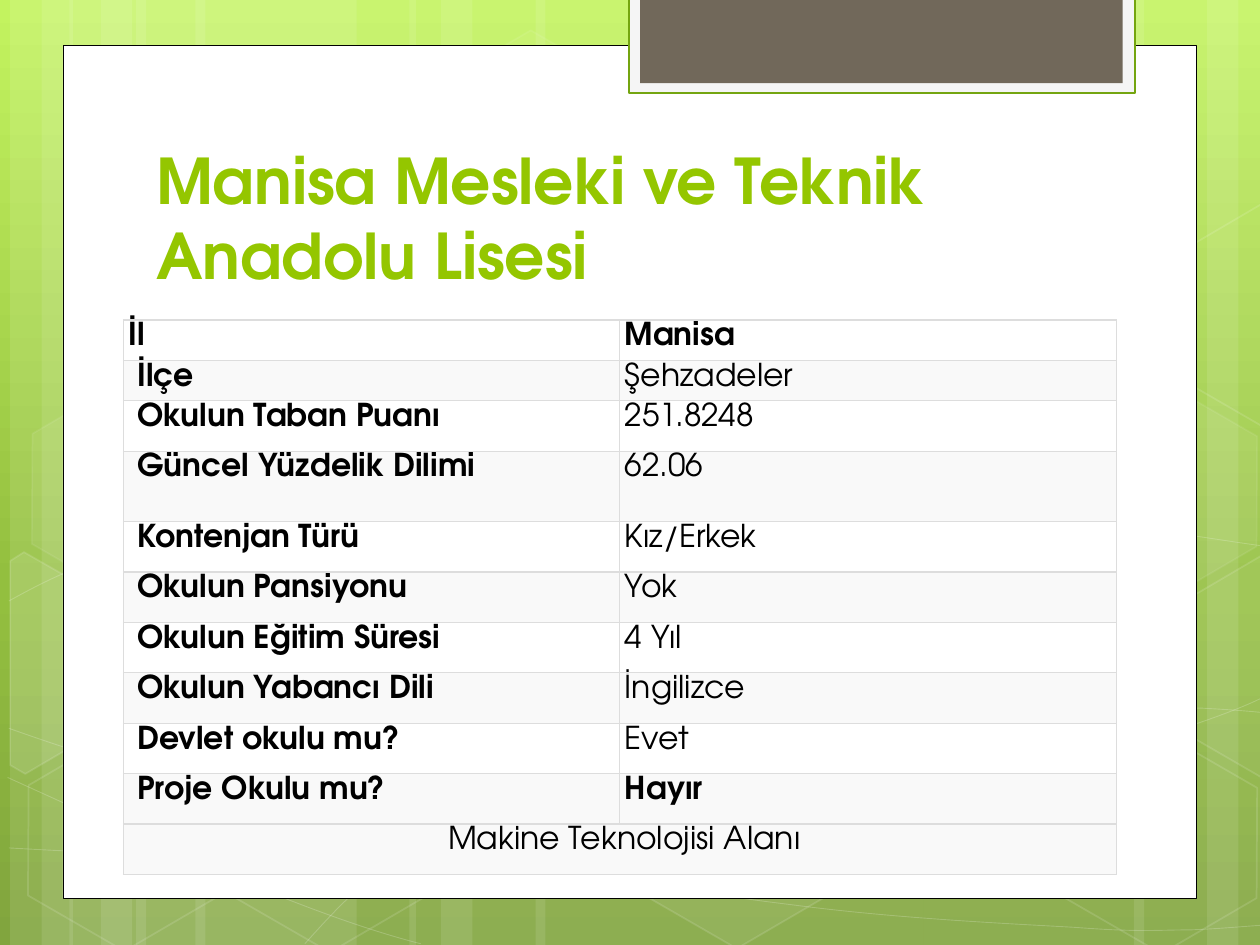
from copy import deepcopy
from math import cos, radians, sin
from pptx import Presentation
from pptx.dml.color import RGBColor
from pptx.enum.shapes import MSO_SHAPE
from pptx.enum.text import MSO_ANCHOR, PP_ALIGN
from pptx.oxml import parse_xml
from pptx.oxml.ns import nsdecls, qn
from pptx.util import Inches, Pt

FONT = "TeX Gyre Adventor"
HUES = {
    "white": "FFFFFF", "black": "000000", "lime": "94C600", "leaf": "74A510",
    "pale": "F5F5F5", "stone": "71685A", "band": "F9F9F9", "rule": "DDDDDD",
}
SKY = [(0, "C3F35F"), (0.62, "93BF3F"), (1, "81A53E")]
BARS = [
    (1.08, 1.75), (0.08, 0.5), (0.33, 0.83), (1.55, 1.75), (0.55, 0.5), (0.8, 0.83),
    (7.33, 1.75), (9.58, 0.5), (9, 0.83), (4.25, 3.08), (3.25, 0.5), (3.5, 0.83),
]
WAVES = [
    [(0.07, 6.73), (0.61, 6.76), (1.15, 6.79), (1.9, 6.78), (2.65, 6.77), (3.58, 6.75),
     (4.58, 6.65), (5.58, 6.55), (7, 6.36), (7.92, 6.17), (8.83, 5.98), (9.77, 5.68),
     (10.07, 5.51)],
    [(0.07, 4.77), (0.36, 4.61), (0.65, 4.46), (1.21, 4.31), (1.78, 4.16), (2.59, 3.94),
     (3.47, 3.87), (4.36, 3.8), (5.44, 3.79), (6.54, 3.87), (7.64, 3.95), (9.47, 4.26),
     (10.07, 4.34)],
    [(0.06, 6.17), (1.27, 6.72), (2.47, 7.27), (3.34, 7.49)],
    [(0.07, 5.78), (0.38, 5.89), (0.7, 6), (1.28, 6.16), (1.86, 6.31), (2.73, 6.56),
     (3.57, 6.73), (4.4, 6.9), (5.45, 7.08), (6.28, 7.18), (7.11, 7.29), (8, 7.33),
     (8.53, 7.36), (9.05, 7.4), (9.19, 7.38), (9.45, 7.38), (9.71, 7.37), (9.89, 7.35),
     (10.07, 7.34)],
    [(2.42, 7.49), (2.6, 7.29), (2.78, 7.09), (3.02, 6.91), (3.26, 6.73), (3.6, 6.53),
     (3.88, 6.39), (4.16, 6.25), (4.33, 6.19), (4.7, 6.09), (5.06, 5.99), (5.73, 5.85),
     (6.08, 5.78), (6.44, 5.71), (6.49, 5.71), (6.8, 5.69), (7.11, 5.66), (7.6, 5.63),
     (7.94, 5.62), (8.29, 5.61), (8.86, 5.62), (8.86, 5.62), (9.08, 5.62), (9.31, 5.62),
     (9.53, 5.62), (9.71, 5.63), (9.88, 5.64), (10.06, 5.66)],
]
HEXES = [
    (3.34, 0.36, 4, 8), (4.97, 5.89, 6, 12), (0.11, 5.91, 0, 12), (0.14, 3.12, 7, 8),
    (1.74, 5.92, 0, 12), (7.53, 4.53, 10, 12), (8.34, 5.93, 0, 12), (8.34, 3.14, 7, 8),
]
LEFT = [(0.08, 4.45), (0.19, 4.38), (0.96, 4.82), (0.95, 5.7), (0.2, 6.14), (0.08, 6.07)]
RIGHT = [(9.26, 4.85), (10.01, 4.41), (10.09, 4.46), (10.09, 6.13), (10.02, 6.17), (9.26, 5.73)]
CUTS = [(LEFT, (0.36, 5.35), 0, 10), (RIGHT, (9.85, 5.2), 0, 4), (RIGHT, (9.85, 5.2), -2.79, 0)]
ROWS = [
    ("İl", "Manisa", 0.32), ("İlçe", "Şehzadeler", 0.32),
    ("Okulun Taban Puanı", "251.8248", 0.4), ("Güncel Yüzdelik Dilimi", "62.06", 0.56),
    ("Kontenjan Türü", "Kız/Erkek", 0.4), ("Okulun Pansiyonu", "Yok", 0.4),
    ("Okulun Eğitim Süresi", "4 Yıl", 0.4), ("Okulun Yabancı Dili", "İngilizce", 0.4),
    ("Devlet okulu mu?", "Evet", 0.4), ("Proje Okulu mu?", "Hayır", 0.4),
    ("Makine Teknolojisi Alanı", None, 0.4),
]


def tint(name):
    """Return the named colour."""
    return RGBColor.from_string(HUES[name])


def apply(item, form):
    """Set each attribute in form on item."""
    for key, val in form.items():
        setattr(item, key, val)


def fade(part, rate):
    """Make the colours under an element rate percent opaque."""
    for node in part.iter(qn("a:srgbClr")):
        node.append(parse_xml(f'<a:alpha {nsdecls("a")} val="{rate * 1000}"/>'))


def paint(shape, fill=None, line=None, width=1, cover=100, ink=100):
    """Give a shape its fill, line and opacity."""
    shape.shadow.inherit = False
    if fill and cover:
        shape.fill.solid()
        shape.fill.fore_color.rgb = tint(fill)
        fade(shape.fill._xPr.find(qn("a:solidFill")), cover)
    else:
        shape.fill.background()
    if line:
        shape.line.color.rgb = tint(line)
        shape.line.width = Pt(width)
        fade(shape.line._ln, ink)
    else:
        shape.line.fill.background()


def block(slide, box, kind=MSO_SHAPE.RECTANGLE, **look):
    """Add a painted preset shape."""
    shape = slide.shapes.add_shape(kind, *map(Inches, box))
    paint(shape, **look)
    return shape


def trace(slide, box, dots, close, **look):
    """Add a painted outline through dots."""
    spots = [(Inches(box[0] + x), Inches(box[1] + y)) for x, y in dots]
    pen = slide.shapes.build_freeform(*spots[0], scale=1.0)
    pen.add_line_segments(spots[1:], close=close)
    shape = pen.convert_to_shape()
    paint(shape, **look)
    return shape


def bend(shape):
    """Turn each three segments of an outline into one cubic curve."""
    legs = list(shape._element.iter(qn("a:lnTo")))
    for trio in zip(legs[::3], legs[1::3], legs[2::3]):
        curve = parse_xml(f'<a:cubicBezTo {nsdecls("a")}/>')
        trio[0].addprevious(curve)
        for leg in trio:
            curve.append(leg[0])
            leg.getparent().remove(leg)


def turn(dots, hub, angle):
    """Rotate dots about the hub."""
    c, s = cos(radians(angle)), sin(radians(angle))
    return [(hub[0] + c * (x - hub[0]) - s * (y - hub[1]),
             hub[1] + s * (x - hub[0]) + c * (y - hub[1])) for x, y in dots]


def sky(slide):
    """Fill the background with the green gradient."""
    fill = slide.background.fill
    fill.gradient()
    fill.gradient_angle = 270
    stops = fill._fill._gradFill.find(qn("a:gsLst"))
    stops.append(deepcopy(stops[-1]))
    for stop, (place, hue) in zip(fill.gradient_stops, SKY):
        stop.position = place
        stop.color.rgb = RGBColor.from_string(hue)


def decor(slide, box):
    """Draw the bars, waves and hexagons in the box."""
    left, top, _, high = box
    for x, wide in BARS:
        block(slide, (left + x, top, wide, high), fill="white", cover=10)
    for wave in WAVES:
        bend(trace(slide, box, wave, False, line="white", width=0.5, ink=20))
    for x, y, cover, ink in HEXES:
        shape = block(slide, (left + x, top + y, 1.75, 1.52), MSO_SHAPE.HEXAGON,
                      fill="white", cover=cover, line="white", ink=ink)
        shape.adjustments[0] = 0.285
        shape.rotation = 30
    for dots, hub, drop, cover in CUTS:
        shape = trace(slide, (left, top + drop), turn(dots, hub, -30), True,
                      fill="white", cover=cover, line="white", ink=12)
        shape.rotation = 30


def panel(slide, box):
    """Draw the white page with its tab."""
    left, top = box[:2]
    block(slide, box, fill="white", line="black", width=0.5)
    block(slide, (left + 4.49, top - 0.38, 4.02, 0.76), fill="pale", line="leaf", width=1.25)
    block(slide, (left + 4.58, top - 0.38, 3.83, 0.68), fill="stone")


def write(para, text, hue, size, bold):
    """Put one styled run in a paragraph."""
    run = para.add_run()
    run.text = text
    apply(run.font, {"name": FONT, "size": Pt(size), "bold": bold})
    run.font.color.rgb = tint(hue)


def title(slide, box, text):
    """Write the title at the foot of the box."""
    frame = slide.shapes.add_textbox(*map(Inches, box)).text_frame
    apply(frame, {"word_wrap": True, "vertical_anchor": MSO_ANCHOR.BOTTOM})
    write(frame.paragraphs[0], text, "lime", 36, True)


def edge(cell):
    """Rule all four sides of a cell."""
    props = cell._tc.get_or_add_tcPr()
    for i, side in enumerate("LRTB"):
        props.insert(i, parse_xml(
            f'<a:ln{side} {nsdecls("a")} w="{Pt(0.75)}"><a:solidFill>'
            f'<a:srgbClr val="{HUES["rule"]}"/></a:solidFill></a:ln{side}>'))


def grid(slide, box):
    """Build the table of school facts."""
    table = slide.shapes.add_table(len(ROWS), 2, *map(Inches, box)).table
    apply(table, {"first_row": False, "horz_banding": False})
    last = len(ROWS) - 1
    for col in table.columns:
        col.width = Inches(box[2] / 2)
    for r, (*texts, high) in enumerate(ROWS):
        table.rows[r].height = Inches(high)
        for c, text in enumerate(texts):
            cell = table.cell(r, c)
            apply(cell, {"margin_left": Inches(0.11 if r and not c else 0.04),
                         "margin_right": Inches(0.04),
                         "margin_top": Inches(0.02), "margin_bottom": 0})
            cell.fill.solid()
            cell.fill.fore_color.rgb = tint("band" if r % 2 or r == last else "white")
            edge(cell)
            if text:
                bold = r < last and (c == 0 or text in ("Manisa", "Hayır"))
                write(cell.text_frame.paragraphs[0], text, "black", 18, bold)
    table.cell(last, 0).merge(table.cell(last, 1))
    table.cell(last, 0).text_frame.paragraphs[0].alignment = PP_ALIGN.CENTER


def main():
    """Build and save the slide."""
    deck = Presentation()
    apply(deck, {"slide_width": Inches(10), "slide_height": Inches(7.5)})
    slide = deck.slides.add_slide(deck.slide_layouts[6])
    sky(slide)
    decor(slide, (0, 0, 10, 7.5))
    panel(slide, (0.5, 0.36, 9, 6.77))
    title(slide, (1.14, 1.12, 7.68, 1.25), "Manisa Mesleki ve Teknik Anadolu Lisesi")
    grid(slide, (0.98, 2.54, 7.88, 4.4))
    deck.save("out.pptx")


if __name__ == "__main__":
    main()
